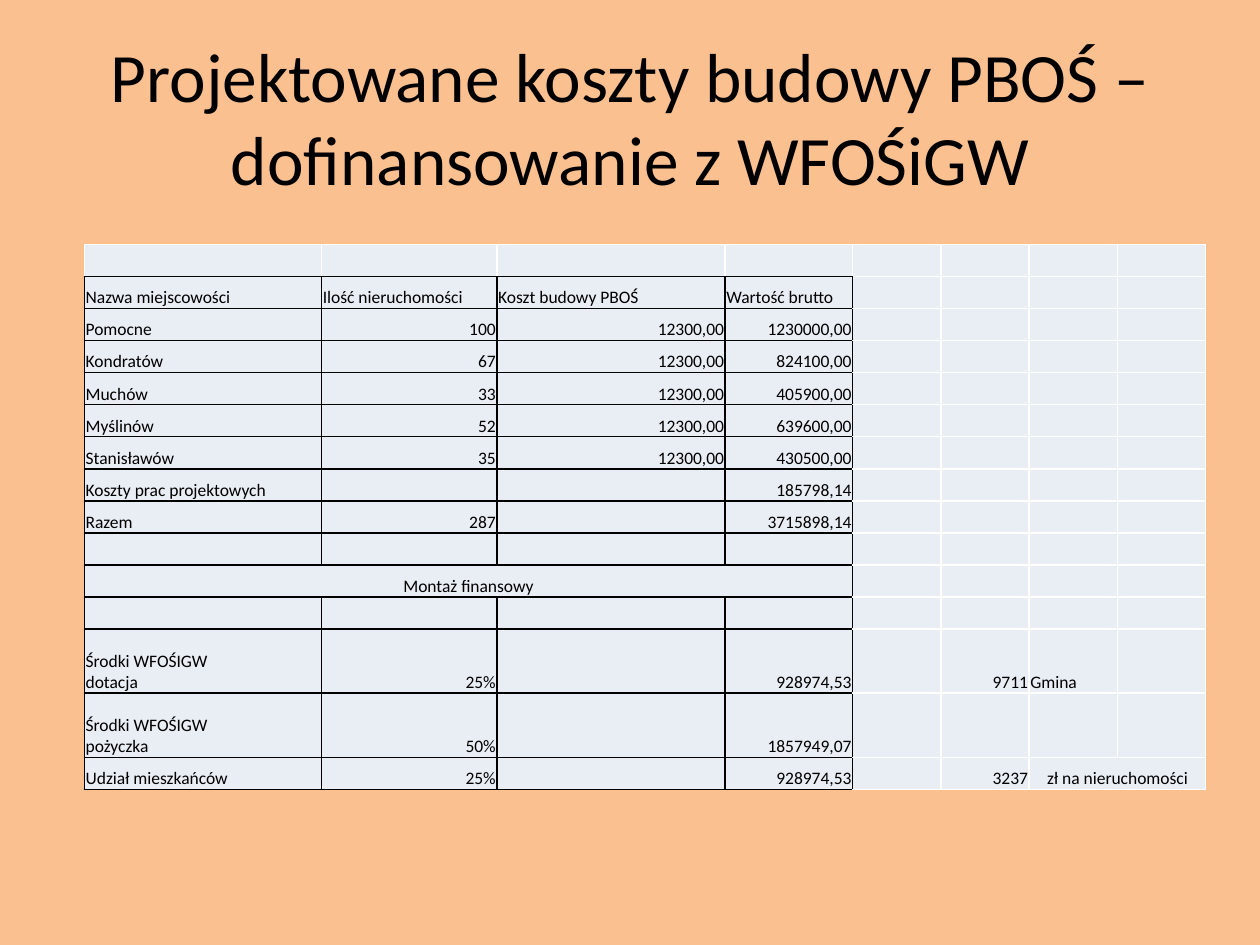
from lxml.etree import SubElement
from pptx import Presentation
from pptx.dml.color import RGBColor
from pptx.enum.text import MSO_ANCHOR as Anchor, MSO_AUTO_SIZE as AutoSize, PP_ALIGN as Align
from pptx.oxml.ns import qn
from pptx.util import Inches, Pt

BLACK, WHITE, PEACH, PALE = "000000", "FFFFFF", "FAC090", "E9EDF4"
COLUMN_WIDTHS = [1.88, 1.39, 1.81, 1.01, 0.7, 0.7, 0.7, 0.7]
FRAMED_COLUMNS = 4
UNIT_COST = "12300,00"
ROWS = [
    [],
    ["Nazwa miejscowości", "Ilość nieruchomości", "Koszt budowy PBOŚ", "Wartość brutto"],
    ["Pomocne", "100", UNIT_COST, "1230000,00"],
    ["Kondratów", "67", UNIT_COST, "824100,00"],
    ["Muchów", "33", UNIT_COST, "405900,00"],
    ["Myślinów", "52", UNIT_COST, "639600,00"],
    ["Stanisławów", "35", UNIT_COST, "430500,00"],
    ["Koszty prac projektowych", "", "", "185798,14"],
    ["Razem", "287", "", "3715898,14"],
    [],
    ["Montaż finansowy"],
    [],
    ["Środki WFOŚIGW\ndotacja", "25%", "", "928974,53", "", "9711", "Gmina"],
    ["Środki WFOŚIGW\npożyczka", "50%", "", "1857949,07"],
    ["Udział mieszkańców", "25%", "", "928974,53", "", "3237", "zł na nieruchomości"],
]
MERGES = {(10, 0): (10, 3), (14, 6): (14, 7)}


def color(value):
    return RGBColor.from_string(value)


def write(frame, text, size, align=Align.LEFT, ink=BLACK, font="Calibri"):
    para = frame.paragraphs[0]
    para.text = text
    para.alignment = align
    for span in para.runs:
        span.font.size = Pt(size)
        span.font.name = font
        span.font.color.rgb = color(ink)
    points = str(round(size * 100))
    for line_break in para._p.findall(qn("a:br")):
        SubElement(line_break, qn("a:rPr"), sz=points)
    SubElement(para._p, qn("a:endParaRPr"), sz=points)


def set_borders(cell, **edges):
    properties = cell._tc.get_or_add_tcPr()
    for position, side in enumerate("LRTB"):
        line = properties.makeelement(qn(f"a:ln{side}"), {"w": str(Pt(1))})
        fill = SubElement(line, qn("a:solidFill"))
        SubElement(fill, qn("a:srgbClr"), val=edges[side])
        properties.insert(position, line)


def cell_alignment(row, column, text):
    if (row, column) in MERGES:
        return Align.CENTER
    if column > 0 and text[:1].isdigit():
        return Align.RIGHT
    return Align.LEFT


def format_cell(cell, row, column, text):
    cell.fill.solid()
    cell.fill.fore_color.rgb = color(PALE)
    cell.vertical_anchor = Anchor.BOTTOM
    cell.margin_left = cell.margin_right = cell.margin_top = Inches(0.01)
    cell.margin_bottom = 0
    write(cell.text_frame, text, 10, cell_alignment(row, column, text))
    framed = column < FRAMED_COLUMNS
    inside = BLACK if framed and row > 0 else WHITE
    left = BLACK if column == FRAMED_COLUMNS and row > 0 else inside
    set_borders(cell, L=left, R=inside, T=inside, B=BLACK if framed else WHITE)


def add_title(page, text, left, top, width, height):
    title = page.shapes.title
    title.left, title.top, title.width, title.height = map(Inches, (left, top, width, height))
    frame = title.text_frame
    frame.auto_size = AutoSize.NONE
    frame.vertical_anchor = Anchor.MIDDLE
    write(frame, text, 39.6, Align.CENTER)


def add_cost_table(page, left, top, width, height):
    box = page.shapes.add_table(len(ROWS), len(COLUMN_WIDTHS), *map(Inches, (left, top, width, height)))
    table = box.table
    table.first_row = table.horz_banding = False
    for column, share in zip(table.columns, COLUMN_WIDTHS):
        column.width = Inches(width * share / sum(COLUMN_WIDTHS))
    line_counts = [max((text.count("\n") + 1 for text in texts), default=1) for texts in ROWS]
    for row, lines in zip(table.rows, line_counts):
        row.height = Inches(height * lines / sum(line_counts))
    for row, texts in enumerate(ROWS):
        for column in range(len(COLUMN_WIDTHS)):
            text = texts[column] if column < len(texts) else ""
            format_cell(table.cell(row, column), row, column, text)
    for start, end in MERGES.items():
        table.cell(*start).merge(table.cell(*end))


def main():
    deck = Presentation()
    deck.slide_width, deck.slide_height = Inches(10), Inches(7.5)
    page = deck.slides.add_slide(deck.slide_layouts[5])
    page.background.fill.solid()
    page.background.fill.fore_color.rgb = color(PEACH)
    add_title(page, "Projektowane koszty budowy PBOŚ – dofinansowanie z WFOŚiGW", 0.5, 0.3, 9, 1.25)
    add_cost_table(page, 0.67, 1.94, 8.9, 4.33)
    deck.save("out.pptx")


if __name__ == "__main__":
    main()
